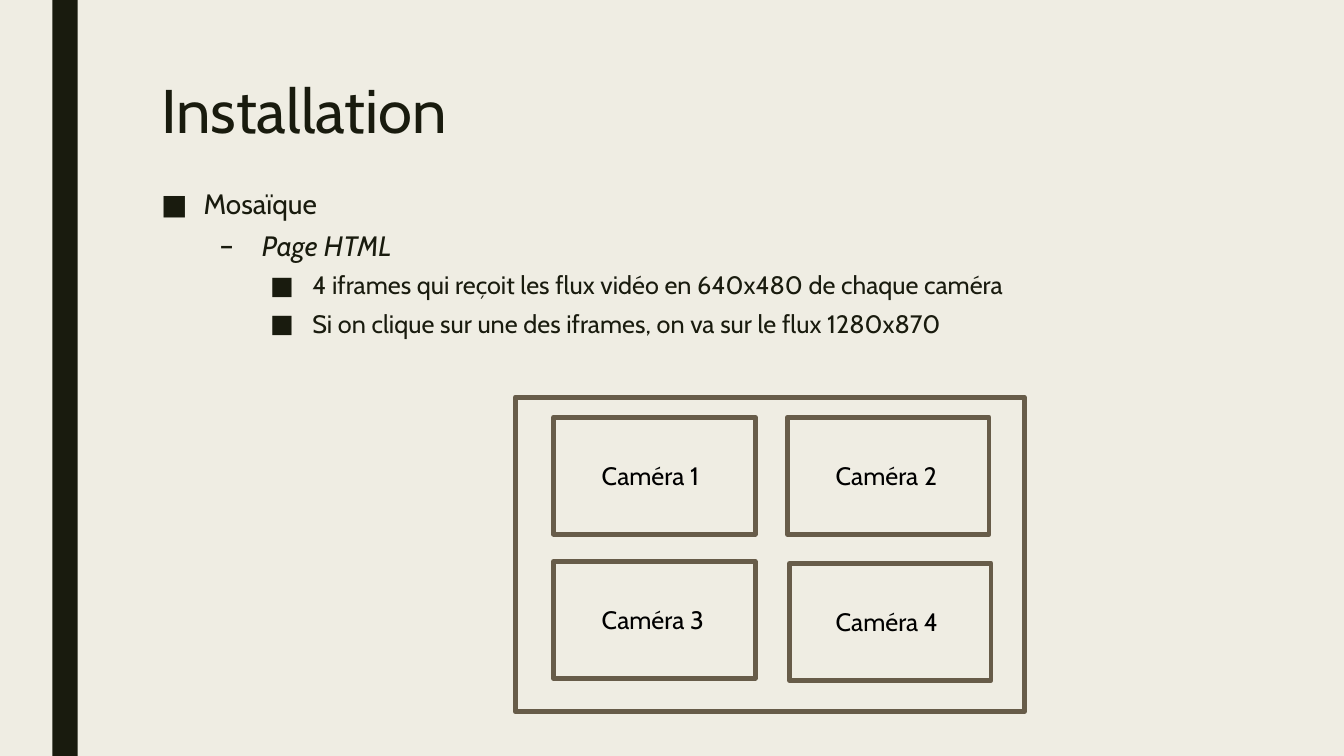
"""Builds the Installation slide: mosaic page notes and a four-camera layout."""
from lxml import etree
from pptx import Presentation
from pptx.dml.color import RGBColor
from pptx.enum.shapes import MSO_SHAPE
from pptx.oxml.ns import qn
from pptx.util import Inches, Pt

RECTANGLE = MSO_SHAPE.RECTANGLE
CREAM = RGBColor(0xEF, 0xED, 0xE3)
DARK = RGBColor(0x19, 0x1B, 0x0E)
BROWN = RGBColor(0x67, 0x5C, 0x49)
BLACK = RGBColor(0, 0, 0)
FONT = "Cabin"


def write(paragraph, text, size=18, color=DARK, italic=False, spacing=1.0,
          before=0, after=0, bullet=None, indent=0):
    paragraph.line_spacing = spacing
    paragraph.space_before = Pt(before)
    paragraph.space_after = Pt(after)
    run = paragraph.add_run()
    run.text = text
    run.font.name = FONT
    run.font.size = Pt(size)
    run.font.italic = italic
    run.font.color.rgb = color
    if bullet:
        properties = paragraph._p.get_or_add_pPr()
        properties.set("marL", str(Inches(indent)))
        properties.set("indent", str(Inches(-0.42)))
        etree.SubElement(properties, qn("a:buFont")).set("typeface", FONT)
        etree.SubElement(properties, qn("a:buChar")).set("char", bullet)


def add_box(left, top, width, height, fill=None):
    box = slide.shapes.add_shape(
        RECTANGLE, Inches(left), Inches(top), Inches(width), Inches(height))
    box.shadow.inherit = False
    if fill:
        box.fill.solid()
        box.fill.fore_color.rgb = fill
        box.line.fill.background()
    else:
        box.fill.background()
        box.line.color.rgb = BROWN
        box.line.width = Pt(3.5)


presentation = Presentation()
presentation.slide_width = Inches(13.33)
presentation.slide_height = Inches(7.5)
slide = presentation.slides.add_slide(presentation.slide_layouts[6])
slide.background.fill.solid()
slide.background.fill.fore_color.rgb = CREAM

add_box(0.52, 0, 0.25, 7.5, fill=DARK)

title = slide.shapes.add_textbox(
    Inches(1.5), Inches(0.75), Inches(10.5), Inches(1.62)).text_frame
title.word_wrap = True
write(title.paragraphs[0], "Installation", size=44, spacing=0.89)

outline = slide.shapes.add_textbox(
    Inches(1.5), Inches(1.83), Inches(9.59), Inches(1.78)).text_frame
outline.word_wrap = True
levels = [
    dict(size=20, before=10, bullet="■", indent=0.42),
    dict(size=20, before=5, bullet="–", indent=1, italic=True),
    dict(size=18, before=5, bullet="■", indent=1.5),
]
points = [
    (0, "Mosaïque"),
    (1, "Page HTML"),
    (2, "4 iframes qui reçoit les flux vidéo en 640x480 de chaque caméra"),
    (2, "Si on clique sur une des iframes, on va sur le flux 1280x870"),
]
for index, (level, text) in enumerate(points):
    point = outline.add_paragraph() if index else outline.paragraphs[0]
    point.level = level
    write(point, text, spacing=0.94, after=2, **levels[level])

add_box(5.11, 3.94, 5.05, 3.12)
cameras = [(5.49, 4.14), (7.81, 4.14), (5.49, 5.57), (7.83, 5.59)]
for number, (left, top) in enumerate(cameras, start=1):
    add_box(left, top, 2, 1.16)
    label_left = 5.87 if number % 2 else 8.19
    label = slide.shapes.add_textbox(
        Inches(label_left), Inches(top + 0.38), Inches(1.24), Inches(0.4)).text_frame
    label.word_wrap = False
    write(label.paragraphs[0], f"Caméra {number}", color=BLACK)

presentation.save("out.pptx")
